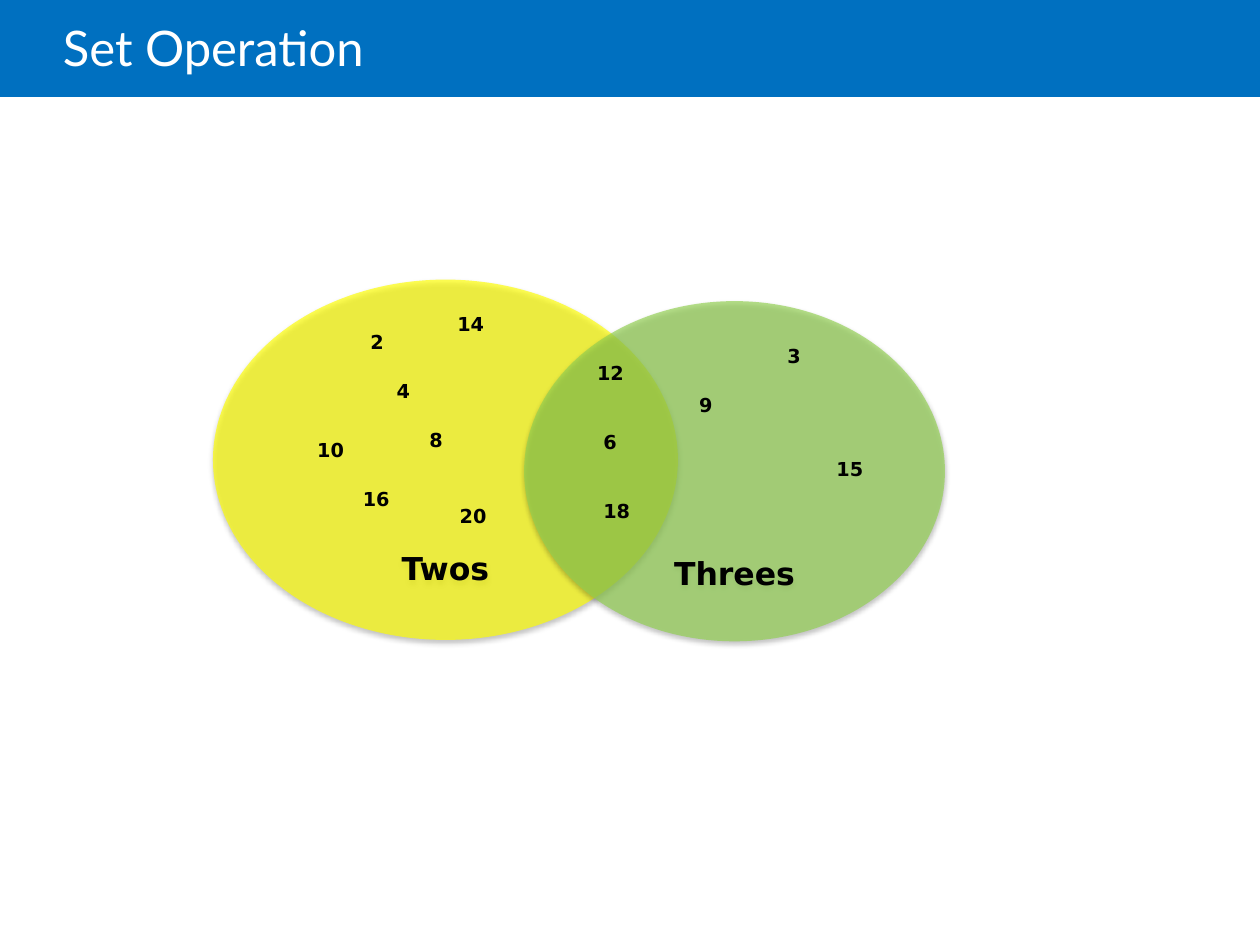
from lxml.etree import SubElement
from pptx import Presentation
from pptx.dml.color import RGBColor
from pptx.enum.shapes import MSO_SHAPE
from pptx.enum.text import MSO_ANCHOR, MSO_AUTO_SIZE, PP_ALIGN
from pptx.oxml.ns import qn
from pptx.util import Pt

BLUE, YELLOW, GREEN = "0070C0", "FFFF00", "92D050"
WHITE, BLACK = "FFFFFF", "000000"

CIRCLES = [
    ("Twos", YELLOW, (0, 0, 265.7, 205.9)),
    ("Threes", GREEN, (177.8, 12.3, 240.5, 194.4)),
]
MEMBERS = {
    2: (82.8, 25.2), 4: (97.9, 53.3), 8: (116.6, 81.4), 10: (52.5, 87.2),
    14: (132.5, 15.2), 16: (78.5, 115.2), 20: (133.9, 124.6),
    6: (216, 82.8), 12: (212.4, 43.2), 18: (216, 121.7),
    3: (321.1, 33.2), 9: (270.7, 61.2), 15: (349.2, 98),
}


def paint(color_format, color):
    color_format.rgb = RGBColor.from_string(color)


def write(frame, text, size, font="DejaVu Sans", color=BLACK, bold=True,
          align=PP_ALIGN.LEFT, anchor=MSO_ANCHOR.TOP, wrap=True,
          margins=(7.2, 3.6, 7.2, 3.6), spacing=1.0):
    frame.word_wrap = wrap
    frame.vertical_anchor = anchor
    (frame.margin_left, frame.margin_top,
     frame.margin_right, frame.margin_bottom) = map(Pt, margins)
    paragraph = frame.paragraphs[0]
    paragraph.alignment = align
    paragraph.line_spacing = spacing
    run = paragraph.add_run()
    run.text = text
    run.font.size = Pt(size)
    run.font.name = font
    run.font.bold = bold
    paint(run.font.color, color)


def add_filled(slide, preset, box, color):
    shape = slide.shapes.add_shape(preset, *map(Pt, box))
    shape.shadow.inherit = False
    shape.fill.solid()
    paint(shape.fill.fore_color, color)
    shape.line.fill.background()
    return shape


def set_alpha(color_element, percent):
    SubElement(color_element, qn("a:alpha"), val=str(percent * 1000))


def add_soft_shadow(shape):
    effects = shape._element.spPr.find(qn("a:effectLst"))
    shadow = SubElement(effects, qn("a:outerShdw"), blurRad=str(Pt(3.1)),
                        dist=str(Pt(1.8)), dir="5400000", rotWithShape="0")
    set_alpha(SubElement(shadow, qn("a:srgbClr"), val=BLACK), 35)


def add_header(slide, box):
    left, top, width, height = box
    add_filled(slide, MSO_SHAPE.RECTANGLE, box, BLUE)
    title = slide.shapes.add_textbox(
        Pt(left + 36), Pt(top), Pt(width - 108), Pt(height + 2.9))
    write(title.text_frame, "Set Operation", 28, font="Lato", color=WHITE,
          bold=False, anchor=MSO_ANCHOR.MIDDLE, margins=(0, 3.6, 7.2, 3.6),
          spacing=0.85)


def add_set(slide, name, color, box):
    circle = add_filled(slide, MSO_SHAPE.OVAL, box, color)
    set_alpha(circle._element.spPr.find(qn("a:solidFill"))[0], 67)
    add_soft_shadow(circle)
    write(circle.text_frame, name, 18, align=PP_ALIGN.CENTER,
          anchor=MSO_ANCHOR.BOTTOM, margins=(0, 0, 0, 0))


def add_venn(slide, left, top):
    for name, color, (x, y, width, height) in CIRCLES:
        add_set(slide, name, color, (left + x, top + y, width, height))
    for number, (x, y) in MEMBERS.items():
        width = 22.3 if number < 10 else 30.2
        member = slide.shapes.add_textbox(
            Pt(left + x), Pt(top + y), Pt(width), Pt(20.6))
        write(member.text_frame, str(number), 11, wrap=False)
        member.text_frame.auto_size = MSO_AUTO_SIZE.SHAPE_TO_FIT_TEXT


def main():
    deck = Presentation()
    deck.slide_width, deck.slide_height = Pt(720), Pt(540)
    slide = deck.slides.add_slide(deck.slide_layouts[6])
    add_header(slide, (0, 0, 720, 55.4))
    add_venn(slide, 121.7, 159.8)
    deck.save("out.pptx")


if __name__ == "__main__":
    main()
